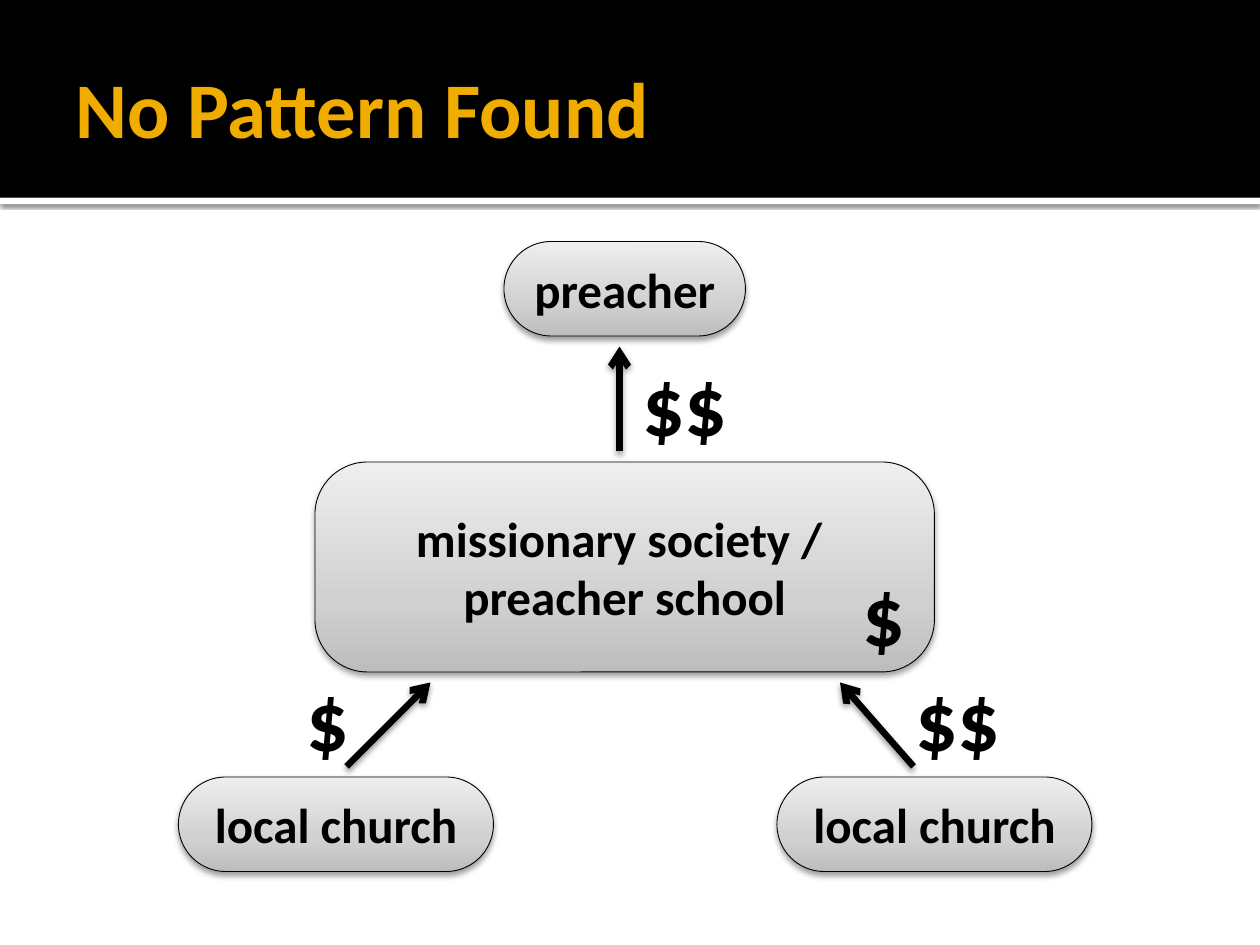
from lxml.etree import SubElement
from pptx import Presentation
from pptx.dml.color import RGBColor
from pptx.enum.shapes import MSO_CONNECTOR, MSO_SHAPE
from pptx.enum.text import MSO_ANCHOR, MSO_AUTO_SIZE, PP_ALIGN
from pptx.oxml.ns import qn
from pptx.util import Inches, Pt

COLORS = {"black": "000000", "white": "FFFFFF", "gold": "F0AD00",
          "dark": "BDBDBD", "mid": "D1D1D1", "light": "EEEEEE"}
FONT = "Calibri"
CELL = Inches(1) // 12  # the slide is a grid of 120 columns by 90 rows
COLS, ROWS = 120, 90


def rgb(name):
    return RGBColor.from_string(COLORS[name])


def grid(*cells):
    return [round(n * CELL) for n in cells]


def add_xml(parent, tag, **attrs):
    return SubElement(parent, qn(tag), {k: str(v) for k, v in attrs.items()})


def add_color(parent, name):
    return add_xml(parent, "a:srgbClr", val=COLORS[name])


def add_shadow(sp, alpha=38, blur=3.5, dist=2):
    """Give a shape or connector a black shadow that falls straight down."""
    effects = add_xml(sp._element.spPr, "a:effectLst")
    shadow = add_xml(effects, "a:outerShdw", blurRad=Pt(blur), dist=Pt(dist),
                     dir=5400000, rotWithShape=0)
    add_xml(add_color(shadow, "black"), "a:alpha", val=alpha * 1000)


def fill_gradient(sp):
    """Grade the fill from dark at the bottom to light at the top."""
    sp.fill.gradient()
    sp.fill.gradient_angle = 90
    stops = sp._element.spPr.find(".//" + qn("a:gsLst"))
    for stop in list(stops):
        stops.remove(stop)
    for pos, name in ((0, "dark"), (35, "mid"), (100, "light")):
        add_color(add_xml(stops, "a:gs", pos=pos * 1000), name)


def format_text(tf, size, color="black", align=PP_ALIGN.LEFT):
    for p in tf.paragraphs:
        p.alignment = align
        for r in p.runs:
            r.font.name, r.font.size, r.font.bold = FONT, Pt(size), True
            r.font.color.rgb = rgb(color)


def add_bar(s, top, height, color):
    sp = s.shapes.add_shape(MSO_SHAPE.RECTANGLE, *grid(0, top, COLS, height))
    sp.fill.solid()
    sp.fill.fore_color.rgb = rgb(color)
    sp.line.fill.background()
    return sp


def add_header(s, text, height):
    add_shadow(add_bar(s, height, 0.6, "white"), alpha=60, blur=2.5, dist=0.8)
    add_bar(s, 0, height, "black").shadow.inherit = False
    title = s.shapes.title
    s.shapes._spTree.append(title._element)  # bring in front of the bars
    title.left, title.top, title.width, title.height = grid(6, 2, 108, height - 2.4)
    tf = title.text_frame
    tf.text = text
    tf.auto_size = MSO_AUTO_SIZE.NONE
    tf.vertical_anchor = MSO_ANCHOR.MIDDLE
    tf.margin_right = Inches(0.05)
    format_text(tf, 45, "gold")


def add_node(s, text, box, radius=0.5):
    sp = s.shapes.add_shape(MSO_SHAPE.ROUNDED_RECTANGLE, *grid(*box))
    sp.adjustments[0] = radius
    fill_gradient(sp)
    sp.line.color.rgb = rgb("black")
    sp.line.width = Pt(0.5)
    add_shadow(sp)
    tf = sp.text_frame
    tf.text = text
    tf.vertical_anchor = MSO_ANCHOR.MIDDLE
    format_text(tf, 28, align=PP_ALIGN.CENTER)


def add_arrow(s, start, end):
    line = s.shapes.add_connector(MSO_CONNECTOR.STRAIGHT, *grid(*start, *end))
    line.line.color.rgb = rgb("black")
    line.line.width = Pt(3.78)
    add_xml(line.line._get_or_add_ln(), "a:tailEnd", type="arrow")
    add_shadow(line)


def add_money(s, text, left, top):
    width = 2.5 + 4.2 * len(text)
    tf = s.shapes.add_textbox(*grid(left, top, width, 10.9)).text_frame
    tf.text = text
    tf.word_wrap = False
    tf.auto_size = MSO_AUTO_SIZE.SHAPE_TO_FIT_TEXT
    format_text(tf, 48)


def add_flow(s, left, top):
    """Draw churches funding a society that funds a preacher."""
    def at(x, y, *size):
        return (left + x, top + y, *size)

    add_node(s, "preacher", at(31, 0, 23, 9))
    for x in (0, 57):
        add_node(s, "local church", at(x, 51, 30, 9))
    add_node(s, "missionary society / \npreacher school", at(13, 21, 59, 20), 0.25)
    for start, end in (((16, 50), (24, 42)), ((70, 50), (63, 42)),
                       ((42, 20), (42, 10))):
        add_arrow(s, at(*start), at(*end))
    for text, x, y in (("$", 11, 40), ("$$", 69, 40), ("$$", 43, 10), ("$", 64, 30)):
        add_money(s, text, *at(x, y))


def main():
    prs = Presentation()
    prs.slide_width, prs.slide_height = grid(COLS, ROWS)
    s = prs.slides.add_slide(prs.slide_layouts[5])
    add_header(s, "No Pattern Found", 18.84)
    add_flow(s, 17, 23)
    prs.save("out.pptx")


if __name__ == "__main__":
    main()
